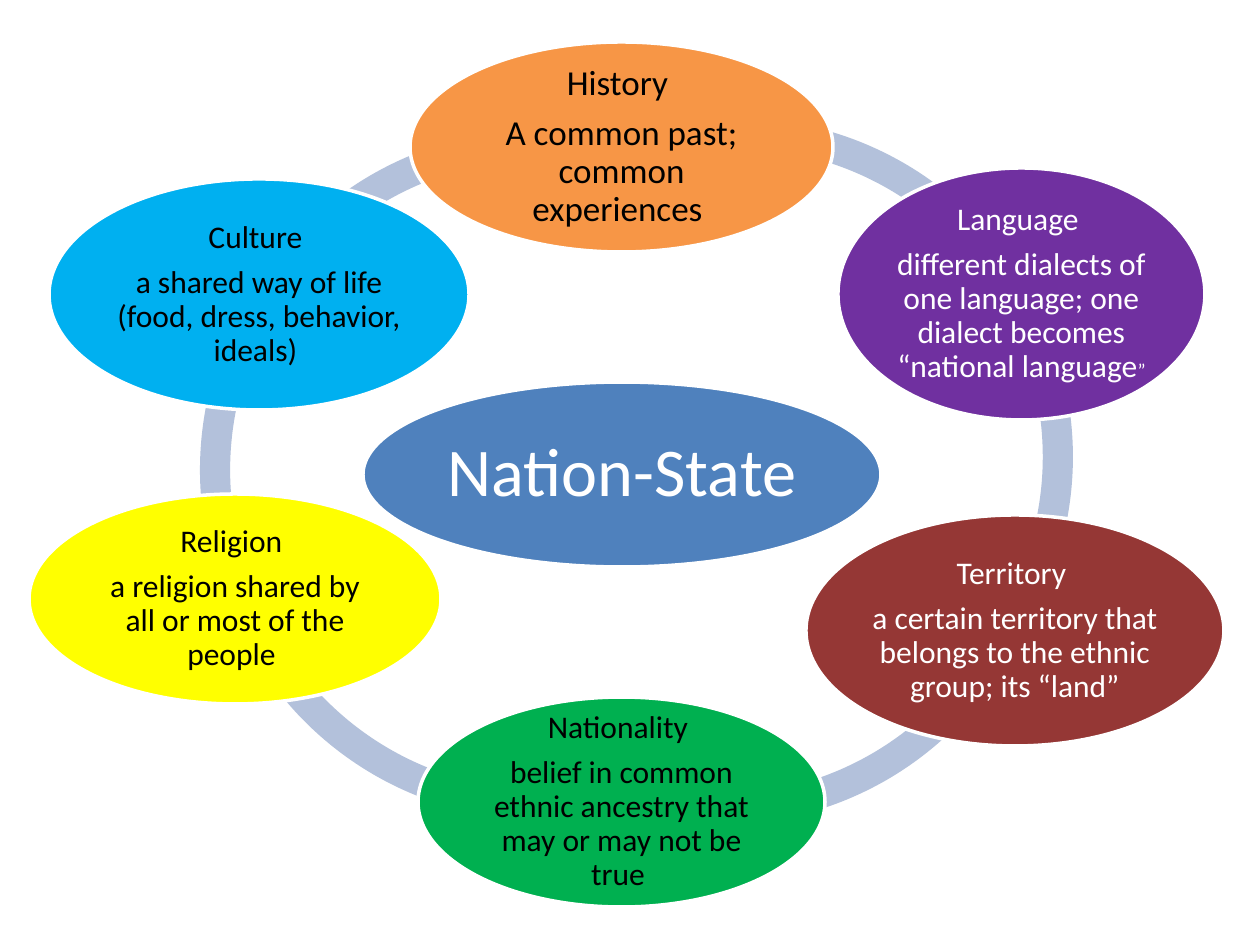
from pptx import Presentation
from pptx.dml.color import RGBColor
from pptx.enum.shapes import MSO_SHAPE
from pptx.enum.text import MSO_ANCHOR, PP_ALIGN
from pptx.util import Emu, Pt

ELLIPSE = MSO_SHAPE.OVAL
BLOCK_ARC = MSO_SHAPE.BLOCK_ARC
MIDDLE = MSO_ANCHOR.MIDDLE
CENTER = PP_ALIGN.CENTER

WHITE = RGBColor(0xFF, 0xFF, 0xFF)
BLACK = RGBColor(0x00, 0x00, 0x00)
RING = RGBColor(0xB3, 0xC1, 0xDB)
BLUE = RGBColor(0x4F, 0x81, 0xBD)
ORANGE = RGBColor(0xF7, 0x96, 0x46)
PURPLE = RGBColor(0x70, 0x30, 0xA0)
MAROON = RGBColor(0x95, 0x37, 0x35)
GREEN = RGBColor(0x00, 0xB0, 0x50)
YELLOW = RGBColor(0xFF, 0xFF, 0x00)
SKY = RGBColor(0x00, 0xB0, 0xF0)

EMU_PER_PX = 914400 / 126
RING_SIZE = 670
RING_THICKNESS = 0.045
ADJUSTMENT_PER_DEGREE = 0.6


def px(length):
    return Emu(round(length * EMU_PER_PX))


class Diagram:
    font = "Calibri"
    line_spacing = 0.9
    space_share = 0.35
    outline = Pt(2)

    def __init__(self, slide):
        self.slide = slide

    def shape(self, kind, box, fill):
        shape = self.slide.shapes.add_shape(kind, *map(px, box))
        shape.shadow.inherit = False
        shape.fill.solid()
        shape.fill.fore_color.rgb = fill
        return shape

    def arc(self, left, top, start, end):
        arc = self.shape(BLOCK_ARC, (left, top, RING_SIZE, RING_SIZE), RING)
        arc.line.fill.background()
        arc.adjustments[0] = start * ADJUSTMENT_PER_DEGREE
        arc.adjustments[1] = end * ADJUSTMENT_PER_DEGREE
        arc.adjustments[2] = RING_THICKNESS

    def ellipse(self, box, fill, color, size, paragraphs, inset=4):
        ellipse = self.shape(ELLIPSE, box, fill)
        ellipse.line.color.rgb = WHITE
        ellipse.line.width = self.outline
        frame = ellipse.text_frame
        frame.word_wrap = True
        frame.vertical_anchor = MIDDLE
        frame.margin_left = frame.margin_right = px(inset)
        frame.margin_top = frame.margin_bottom = px(inset)
        for index, spans in enumerate(paragraphs):
            para = frame.add_paragraph() if index else frame.paragraphs[0]
            para.alignment = CENTER
            para.line_spacing = self.line_spacing
            para.space_after = Pt(size * self.space_share)
            for text, span_size in spans:
                self.span(para, text, span_size or size, color)

    def span(self, para, text, size, color):
        span = para.add_run()
        span.text = text
        span.font.name = self.font
        span.font.size = Pt(size)
        span.font.color.rgb = color


ARCS = [
    (204, 130, 211.27, 284.57),
    (200, 135, 156.75, 212.38),
    (207, 150, 75.9, 159.57),
    (384, 155, 25.41, 107.49),
    (403, 122, 330.22, 31.99),
    (401, 118, 249.48, 330.81),
]

TRAITS = [
    ((410, 42, 423, 210), ORANGE, BLACK, 20, "History ",
     [("A common past; common experiences ", None)]),
    ((838, 168, 367, 252), PURPLE, WHITE, 18, "Language ",
     [("different dialects of one language; one dialect becomes “national language", None),
      ("”", 11)]),
    ((806, 515, 418, 231), MAROON, WHITE, 18, "Territory ",
     [("a certain territory that belongs to the ethnic group; its “land”", None)]),
    ((418, 697, 407, 210), GREEN, BLACK, 18, "Nationality ",
     [("belief in common ethnic ancestry that may or may not be true ", None)]),
    ((29, 494, 412, 210), YELLOW, BLACK, 18, "Religion ",
     [("a religion shared by all or most of the people ", None)]),
    ((49, 179, 420, 231), SKY, BLACK, 18, "Culture ",
     [("a shared way of life (food, dress, behavior, ideals) ", None)]),
]


def main():
    deck = Presentation()
    deck.slide_width = px(1260)
    deck.slide_height = px(945)
    diagram = Diagram(deck.slides.add_slide(deck.slide_layouts[6]))
    for arc in ARCS:
        diagram.arc(*arc)
    diagram.ellipse((363, 382, 518, 185), BLUE, WHITE, 39,
                    [[("Nation-State ", None)]], inset=6)
    for box, fill, color, size, name, description in TRAITS:
        diagram.ellipse(box, fill, color, size, [[(name, None)], description])
    deck.save("out.pptx")


if __name__ == "__main__":
    main()
